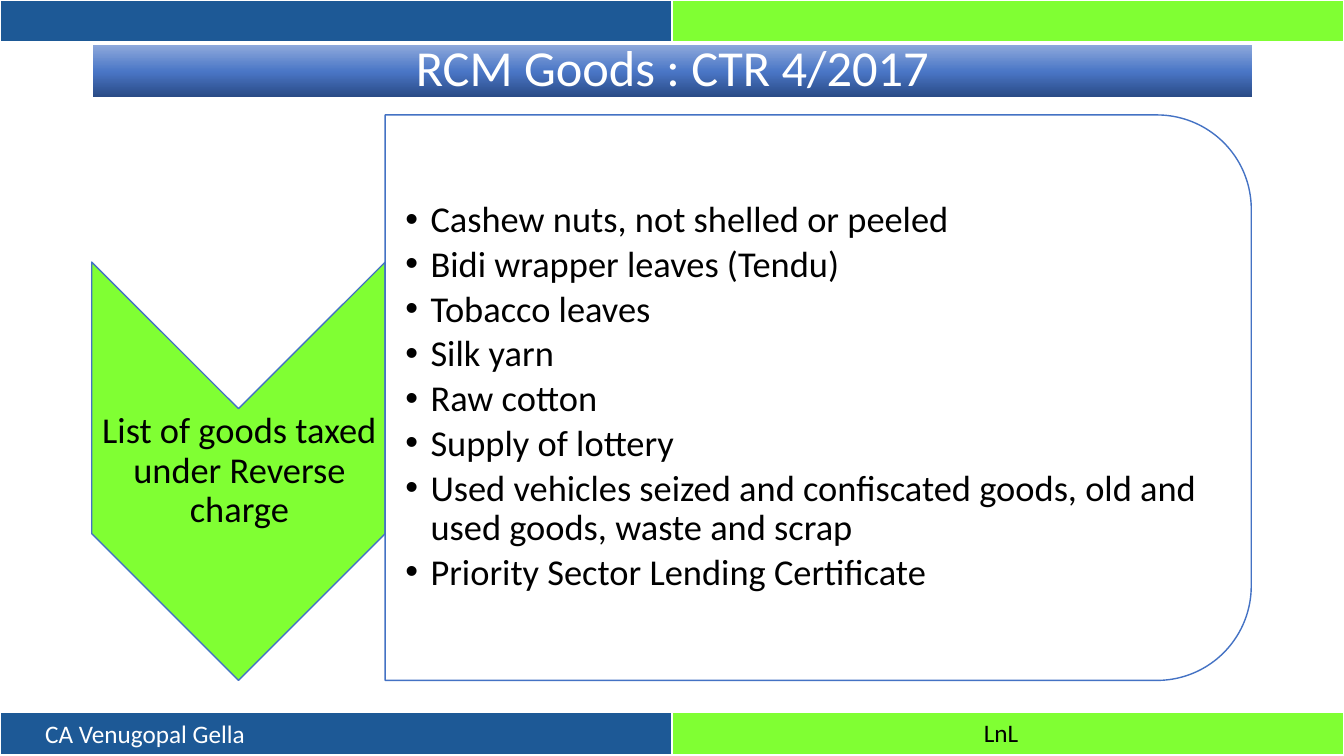
from copy import deepcopy
from dataclasses import dataclass

from lxml.etree import SubElement
from pptx import Presentation
from pptx.dml.color import RGBColor
from pptx.enum.shapes import MSO_SHAPE
from pptx.enum.text import MSO_ANCHOR, MSO_AUTO_SIZE, PP_ALIGN
from pptx.oxml.ns import qn
from pptx.util import Inches, Pt

COLOURS = {
    "navy": "1D5996", "lime": "80FF33", "outline": "4472C4",
    "white": "FFFFFF", "black": "000000",
    "title_dark": "2A4B86", "title_mid": "4A76C6", "title_light": "8FAADC",
}
TITLE_STOPS = [(0, "title_dark"), (0.48, "title_mid"), (1, "title_light")]
CELL_BORDERS = {"a:lnL": 1, "a:lnR": 1, "a:lnT": 1, "a:lnB": 3}
GOODS = [
    "Cashew nuts, not shelled or peeled",
    "Bidi wrapper leaves (Tendu)",
    "Tobacco leaves",
    "Silk yarn",
    "Raw cotton",
    "Supply of lottery",
    "Used vehicles seized and confiscated goods, old and used goods, waste and scrap",
    "Priority Sector Lending Certificate",
]


@dataclass
class Box:
    """Position and size in inches."""
    left: float
    top: float
    width: float
    height: float

    def lengths(self):
        """Return the four values as lengths."""
        return [Inches(v) for v in (self.left, self.top, self.width, self.height)]


@dataclass
class Label:
    """A block of text with its look."""
    box: Box
    lines: list[str]
    size: float
    colour: str = "black"
    inset: float | None = None
    align: PP_ALIGN = PP_ALIGN.LEFT
    bulleted: bool = False


@dataclass
class Panel:
    """A preset shape turned by a quarter."""
    box: Box
    preset: MSO_SHAPE
    fill: str
    opacity: int = 100


BAND_TOPS = [7.07, 0]
FOOTERS = [
    Label(Box(0.35, 7.08, 2.21, 0.4), ["CA Venugopal Gella"], 18, "white"),
    Label(Box(9.66, 7.07, 0.62, 0.4), ["LnL"], 18),
]
PANELS = [
    Panel(Box(0.29, 3.22, 4.15, 2.91), MSO_SHAPE.CHEVRON, "lime"),
    Panel(Box(5.31, -0.35, 5.61, 8.59), MSO_SHAPE.ROUND_2_SAME_RECTANGLE, "white", 90),
]
PANEL_LABELS = [
    Label(Box(0.92, 4.05, 2.91, 1.25), ["List of goods taxed under Reverse charge"],
          26, inset=0.02, align=PP_ALIGN.CENTER),
    Label(Box(3.82, 1.41, 8.32, 5.06), GOODS, 26, inset=0.2, bulleted=True),
]


def rgb(name: str) -> RGBColor:
    """Look up a named colour."""
    return RGBColor.from_string(COLOURS[name])


def set_font(paragraph, size: float, colour: str) -> None:
    """Set the font of a paragraph."""
    paragraph.font.name = "Calibri"
    paragraph.font.size = Pt(size)
    paragraph.font.color.rgb = rgb(colour)


def add_band(slide, top: float) -> None:
    """Add a two-coloured band across the slide."""
    band = slide.shapes.add_table(1, 2, *Box(0, top, 13.33, 0.43).lengths()).table
    for cell, colour in zip(band.rows[0].cells, ("navy", "lime")):
        properties = cell._tc.get_or_add_tcPr()
        for side, width in CELL_BORDERS.items():
            border = SubElement(properties, qn(side), w=str(Pt(width)))
            solid = SubElement(border, qn("a:solidFill"))
            SubElement(solid, qn("a:srgbClr"), val=COLOURS["white"])
        cell.fill.solid()
        cell.fill.fore_color.rgb = rgb(colour)


def add_bullet(paragraph) -> None:
    """Give a paragraph a hanging bullet."""
    properties = paragraph._p.get_or_add_pPr()
    properties.set("marL", str(Inches(0.25)))
    properties.set("indent", str(Inches(-0.25)))
    SubElement(properties, qn("a:buFont"), typeface="Arial")
    SubElement(properties, qn("a:buChar"), char="•")


def add_label(slide, label: Label) -> None:
    """Add a text box, wrapped when it has its own inset and growing otherwise."""
    frame = slide.shapes.add_textbox(*label.box.lengths()).text_frame
    inside_panel = label.inset is not None
    frame.word_wrap = inside_panel
    if inside_panel:
        frame.vertical_anchor = MSO_ANCHOR.MIDDLE
        frame.margin_left = Inches(label.inset)
        frame.margin_top = frame.margin_right = frame.margin_bottom = Inches(0.02)
    else:
        frame.auto_size = MSO_AUTO_SIZE.SHAPE_TO_FIT_TEXT
    frame.text = "\n".join(label.lines)
    for paragraph in frame.paragraphs:
        paragraph.alignment = label.align
        if inside_panel:
            paragraph.line_spacing = 0.9
        if label.bulleted:
            paragraph.space_after = Pt(3.9)
            add_bullet(paragraph)
        set_font(paragraph, label.size, label.colour)


def add_panel(slide, panel: Panel) -> None:
    """Add an outlined shape turned by 90 degrees."""
    shape = slide.shapes.add_shape(panel.preset, *panel.box.lengths())
    shape.rotation = 90
    shape.shadow.inherit = False
    shape.fill.solid()
    shape.fill.fore_color.rgb = rgb(panel.fill)
    if panel.opacity < 100:
        colour = shape._element.spPr.find(qn("a:solidFill"))[0]
        SubElement(colour, qn("a:alpha"), val=str(panel.opacity * 1000))
    shape.line.color.rgb = rgb("outline")
    shape.line.width = Pt(1)


def format_title(title) -> None:
    """Place the title on its gradient bar."""
    title.left, title.top, title.width, title.height = Box(0.92, 0.44, 11.5, 0.52).lengths()
    title.fill.gradient()
    title.fill.gradient_angle = 90
    stop_list = next(title._element.iter(qn("a:gsLst")))
    stop_list.append(deepcopy(stop_list[0]))
    for stop, (position, colour) in zip(title.fill.gradient_stops, TITLE_STOPS):
        stop.position = position
        stop.color.rgb = rgb(colour)
    frame = title.text_frame
    frame.text = "RCM Goods : CTR 4/2017"
    frame.vertical_anchor = MSO_ANCHOR.MIDDLE
    heading = frame.paragraphs[0]
    heading.alignment = PP_ALIGN.CENTER
    heading.line_spacing = 0.9
    set_font(heading, 36, "white")


def main() -> None:
    """Build and save the slide."""
    deck = Presentation()
    deck.slide_width, deck.slide_height = Inches(13.33), Inches(7.5)
    slide = deck.slides.add_slide(deck.slide_layouts[5])
    format_title(slide.shapes.title)
    for top in BAND_TOPS:
        add_band(slide, top)
    for footer in FOOTERS:
        add_label(slide, footer)
    for panel, label in zip(PANELS, PANEL_LABELS):
        add_panel(slide, panel)
        add_label(slide, label)
    deck.save("out.pptx")


if __name__ == "__main__":
    main()
